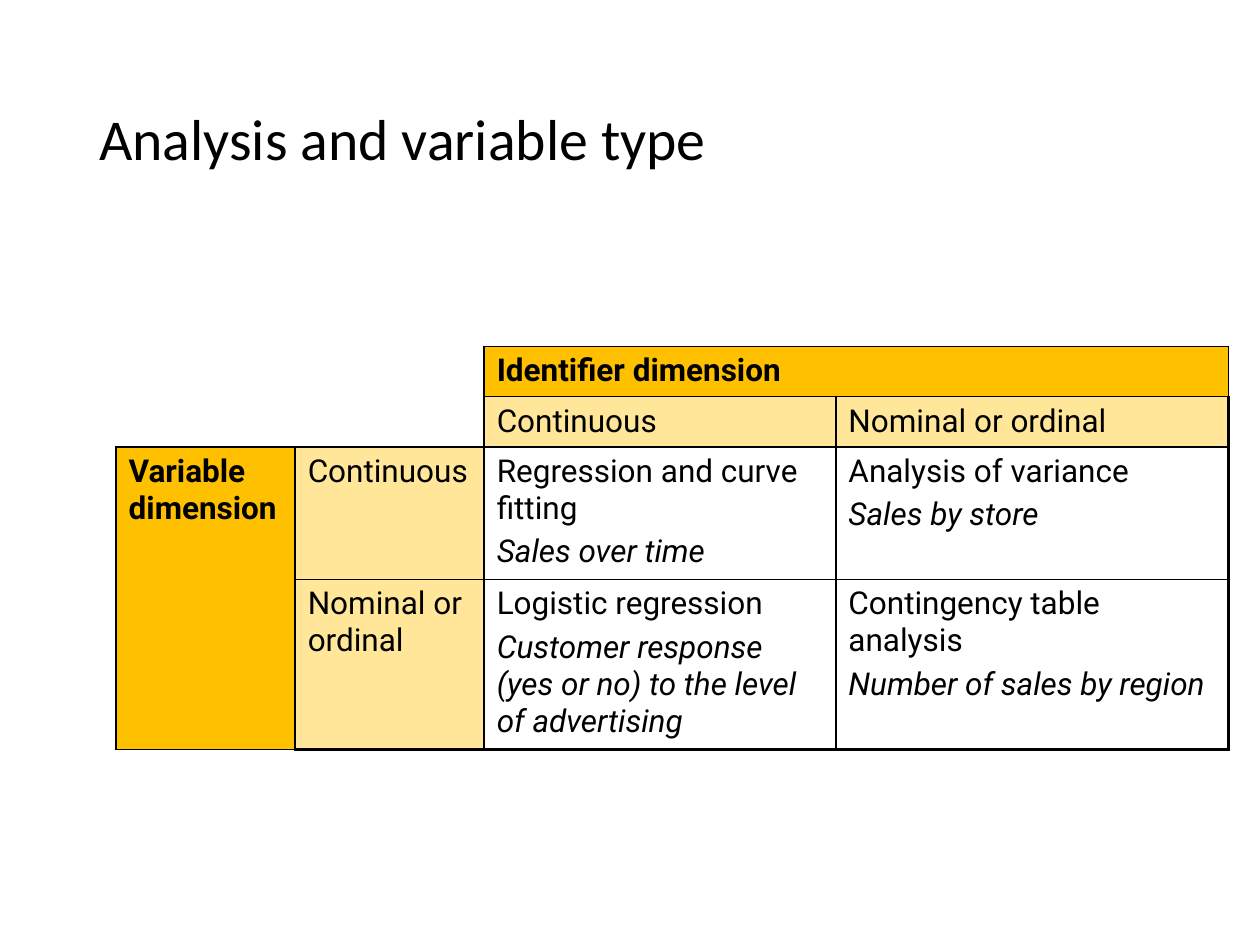
from dataclasses import dataclass

from lxml.etree import SubElement
from pptx import Presentation
from pptx.dml.color import RGBColor
from pptx.enum.text import MSO_ANCHOR
from pptx.oxml.ns import qn
from pptx.util import Cm, Pt


@dataclass(frozen=True)
class Theme:
    text: str = "000000"
    heading: str = "FFC000"
    subheading: str = "FFE699"
    body: str = "FFFFFF"
    title_font: str = "Calibri"
    table_font: str = "Roboto"
    title_size: float = 33
    table_size: float = 18
    thin: float = 1
    thick: float = 2.25


theme = Theme()


def set_font(p, name, size, bold=False, italic=False):
    p.font.name = name
    p.font.size = Pt(size)
    p.font.bold = bold
    p.font.italic = italic
    p.font.color.rgb = RGBColor.from_string(theme.text)


def set_border(cell, side, width):
    ln = SubElement(cell._tc.get_or_add_tcPr(), qn(f"a:ln{side}"), w=str(Pt(width)))
    if width:
        fill = SubElement(ln, qn("a:solidFill"))
        SubElement(fill, qn("a:srgbClr"), val=theme.text)
    else:
        SubElement(ln, qn("a:noFill"))


prs = Presentation()
prs.slide_width, prs.slide_height = Cm(25.4), Cm(19.05)
s = prs.slides.add_slide(prs.slide_layouts[6])

title = s.shapes.add_textbox(Cm(1.75), Cm(1.02), Cm(21.89), Cm(3.68))
tf = title.text_frame
tf.word_wrap = True
tf.vertical_anchor = MSO_ANCHOR.MIDDLE
p = tf.paragraphs[0]
p.text = "Analysis and variable type"
p.line_spacing = 0.9
set_font(p, theme.title_font, theme.title_size)

col_widths = [3.61, 3.81, 7.09, 7.92]
row_heights = [1, 1, 2.62, 3.37]
rows = [
    ["", "", "Identifier dimension", ""],
    ["", "", "Continuous", "Nominal or ordinal"],
    ["Variable dimension", "Continuous",
     "Regression and curve fitting\nSales over time",
     "Analysis of variance\nSales by store"],
    ["", "Nominal or ordinal",
     "Logistic regression\nCustomer response (yes or no) to the level of advertising",
     "Contingency table analysis\nNumber of sales by region"],
]

frame = s.shapes.add_table(4, 4, Cm(2.34), Cm(6.98), Cm(sum(col_widths)), Cm(sum(row_heights)))
table = frame.table
table.first_row = table.horz_banding = False
for col, width in zip(table.columns, col_widths):
    col.width = Cm(width)
for row, height in zip(table.rows, row_heights):
    row.height = Cm(height)
table.cell(0, 2).merge(table.cell(0, 3))
table.cell(2, 0).merge(table.cell(3, 0))

fills = {0: theme.heading, 1: theme.subheading}
for i, texts in enumerate(rows):
    for j, text in enumerate(texts):
        cell = table.cell(i, j)
        blank = i < 2 and j < 2
        edge = 0 if blank else theme.thin
        right = theme.thick if j == 3 and i > 0 else theme.thin if j == 1 else edge
        bottom = theme.thick if i == 3 and j > 0 else theme.thin if i == 1 else edge
        for side, width in zip("LRTB", (edge, right, edge, bottom)):
            set_border(cell, side, width)
        if blank:
            cell.fill.background()
            continue
        level = min(i, j)
        cell.fill.solid()
        cell.fill.fore_color.rgb = RGBColor.from_string(fills.get(level, theme.body))
        if not text:
            continue
        tf = cell.text_frame
        tf.text = text
        for k, p in enumerate(tf.paragraphs):
            if k:
                p.space_before = Pt(3.6)
            set_font(p, theme.table_font, theme.table_size, level == 0, k > 0)

prs.save("out.pptx")
